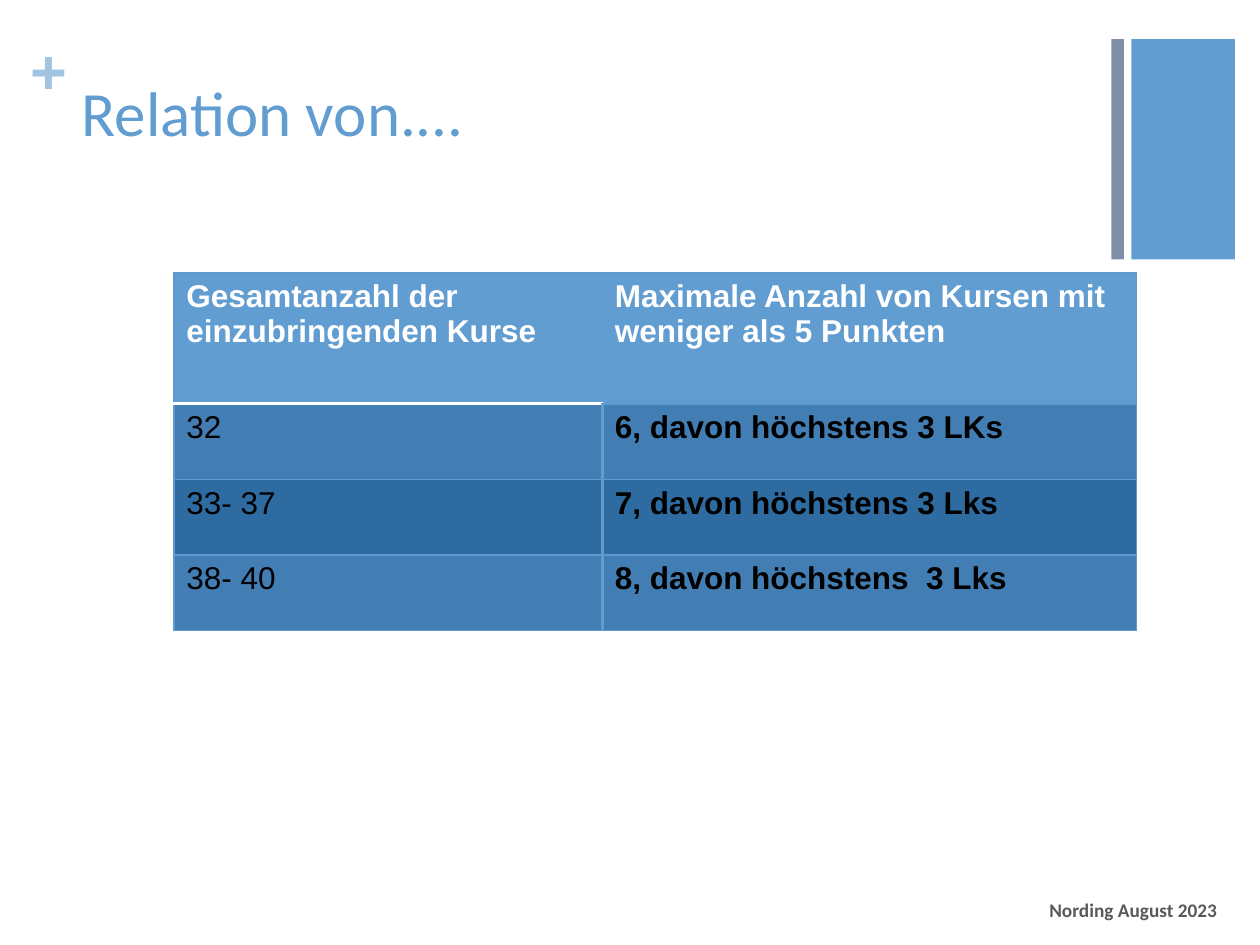
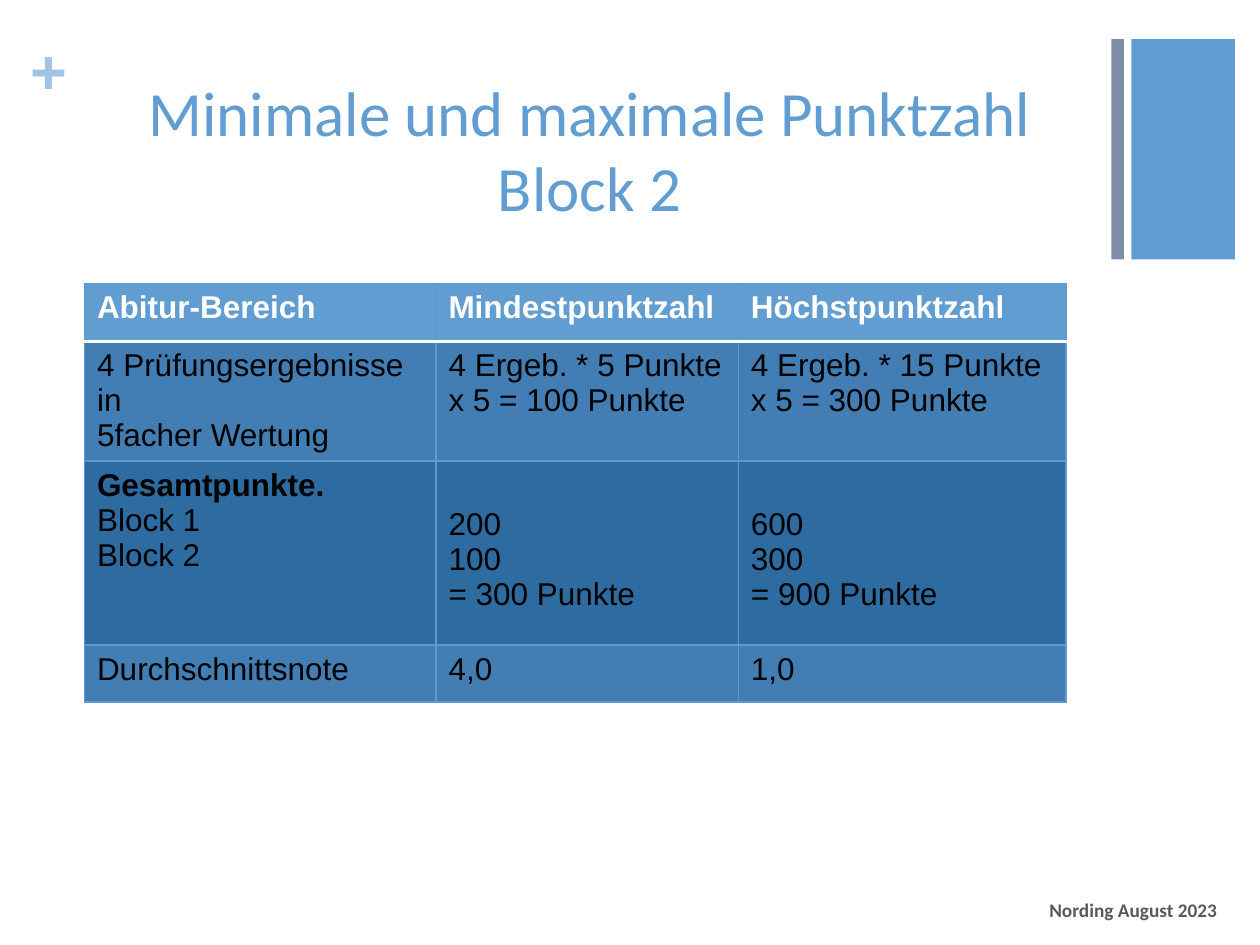
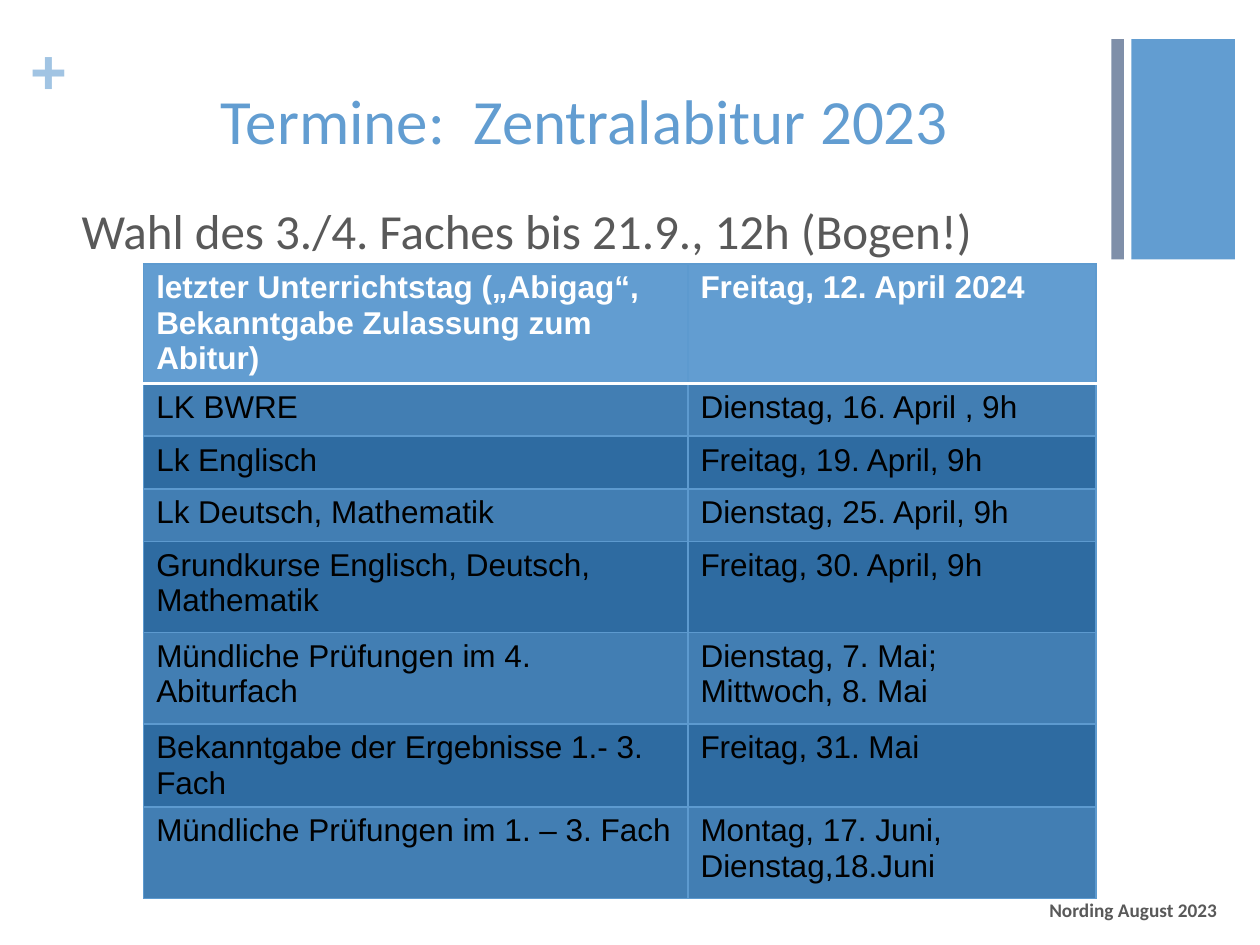
from dataclasses import dataclass

from lxml.etree import SubElement
from pptx import Presentation
from pptx.dml.color import RGBColor
from pptx.enum.shapes import MSO_SHAPE
from pptx.enum.text import MSO_ANCHOR, MSO_AUTO_SIZE, PP_ALIGN
from pptx.oxml.ns import qn
from pptx.util import Inches, Pt


@dataclass(frozen=True)
class Theme:
    blue: str = "629DD1"
    slate: str = "7F8FA9"
    pale: str = "A1C4E3"
    rule: str = "5D9ACF"
    band: str = "427EB3"
    band_dark: str = "2E6BA1"
    white: str = "FFFFFF"
    black: str = "000000"
    grey: str = "595959"
    head_font: str = "Calibri"
    table_font: str = "Arial"
    title_size: int = 36
    body_size: int = 28
    table_size: int = 18
    footer_size: int = 11


COLS, ROWS = 100, 75
FOOTER = "Nording August 2023"


def write(tf, text, *, font, size, color, bold=False, bold_lines=(), align=PP_ALIGN.LEFT):
    tf.word_wrap = True
    for i, line in enumerate(text.split("\n")):
        p = tf.paragraphs[0] if i == 0 else tf.add_paragraph()
        p.text = line
        p.alignment = align
        p.space_before = Pt(0)
        for r in p.runs:
            r.font.name = font
            r.font.size = Pt(size)
            r.font.bold = bold or line in bold_lines
            r.font.color.rgb = RGBColor.from_string(color)


def draw_edge(cell, side, color, width):
    ln = SubElement(cell._tc.get_or_add_tcPr(), qn(f"a:ln{side}"), w=str(Pt(width)))
    fill = SubElement(ln, qn("a:solidFill"))
    SubElement(fill, qn("a:srgbClr"), val=color)


class Deck:
    def __init__(self, theme):
        self.t = theme
        self.prs = Presentation()
        self.prs.slide_width = Inches(10)
        self.prs.slide_height = Inches(7.5)
        self.s = None

    def x(self, cols):
        return round(self.prs.slide_width * cols / COLS)

    def y(self, rows):
        return round(self.prs.slide_height * rows / ROWS)

    def box(self, left, top, width, height):
        return self.x(left), self.y(top), self.x(width), self.y(height)

    def slide(self, title, align=PP_ALIGN.CENTER, left=5.5, top=5.3):
        self.s = self.prs.slides.add_slide(self.prs.slide_layouts[5])
        self.title(title, align, left, top)
        self.text("+", 2.4, 2.5, 2.8, 6.1, inset=0, font=self.t.table_font,
                  size=self.t.title_size, color=self.t.pale, bold=True)
        self.rect(89.8, 3.1, 8.2, 17.5, self.t.blue)
        self.rect(88.2, 3.1, 1, 17.5, self.t.slate)
        self.text(FOOTER, 74.3, 70.2, 23.3, 4, anchor=MSO_ANCHOR.MIDDLE,
                  font=self.t.head_font, size=self.t.footer_size,
                  color=self.t.grey, bold=True, align=PP_ALIGN.RIGHT)

    def title(self, text, align, left, top):
        sp = self.s.shapes.title
        sp.left, sp.top, sp.width, sp.height = self.box(left, top, 82.6, 12.2)
        tf = sp.text_frame
        tf.auto_size = MSO_AUTO_SIZE.NONE
        tf.vertical_anchor = MSO_ANCHOR.TOP
        write(tf, text, font=self.t.head_font, size=self.t.title_size,
              color=self.t.blue, align=align)

    def text(self, text, left, top, width, height, inset=None,
             anchor=MSO_ANCHOR.TOP, **fmt):
        tf = self.s.shapes.add_textbox(*self.box(left, top, width, height)).text_frame
        tf.vertical_anchor = anchor
        if inset is not None:
            tf.margin_left = tf.margin_right = tf.margin_top = tf.margin_bottom = inset
        write(tf, text, **fmt)

    def rect(self, left, top, width, height, color):
        sp = self.s.shapes.add_shape(MSO_SHAPE.RECTANGLE, *self.box(left, top, width, height))
        sp.shadow.inherit = False
        sp.fill.solid()
        sp.fill.fore_color.rgb = RGBColor.from_string(color)
        sp.line.fill.background()

    def edges(self, row, col, strong_col):
        thin = (self.t.rule, 1)
        edges = dict.fromkeys("LRTB", thin)
        if row < 2 and col != strong_col:
            edges["B" if row == 0 else "T"] = (self.t.white, 2)
        if row > 0 and strong_col is not None:
            if col == strong_col:
                edges["L"] = (self.t.blue, 2)
            elif col == strong_col - 1:
                edges["R"] = (self.t.blue, 2)
        return edges

    def table(self, left, top, widths, heights, data, strong_col=None,
              bold_lines=(), lowered=()):
        frame = self.s.shapes.add_table(
            len(heights), len(widths), *self.box(left, top, sum(widths), sum(heights)))
        table = frame.table
        table.first_row = table.horz_banding = False
        for column, width in zip(table.columns, widths):
            column.width = self.x(width)
        for row, height in zip(table.rows, heights):
            row.height = self.y(height)
        for i, line in enumerate(data):
            header = i == 0
            fill = self.t.blue if header else (self.t.band_dark, self.t.band)[i % 2]
            for j, text in enumerate(line):
                cell = table.cell(i, j)
                for side, (color, width) in self.edges(i, j, strong_col).items():
                    draw_edge(cell, side, color, width)
                cell.fill.solid()
                cell.fill.fore_color.rgb = RGBColor.from_string(fill)
                cell.margin_bottom = 0
                if (i, j) in lowered:
                    cell.margin_top = self.y(3.6)
                write(cell.text_frame, text, font=self.t.table_font,
                      size=self.t.table_size, bold=header or j == strong_col,
                      bold_lines=bold_lines,
                      color=self.t.white if header else self.t.black)


def relation(deck):
    deck.slide("Relation von....", align=PP_ALIGN.LEFT)
    deck.table(13.8, 21.65, [34, 42.4], [10.4, 6, 6, 6], [
        ("Gesamtanzahl der einzubringenden Kurse",
         "Maximale Anzahl von Kursen mit weniger als 5 Punkten"),
        ("32", "6, davon höchstens 3 LKs"),
        ("33- 37", "7, davon höchstens 3 Lks"),
        ("38- 40", "8, davon höchstens  3 Lks"),
    ], strong_col=1)


def block_two(deck):
    deck.slide("Minimale und maximale Punktzahl\vBlock 2")
    deck.table(6.7, 22.5, [27.9, 24, 26], [4.6, 9.3, 14.6, 4.5], [
        ("Abitur-Bereich", "Mindestpunktzahl", "Höchstpunktzahl"),
        ("4 Prüfungsergebnisse in\n5facher Wertung",
         "4 Ergeb. * 5 Punkte x 5 = 100 Punkte",
         "4 Ergeb. * 15 Punkte x 5 = 300 Punkte"),
        ("Gesamtpunkte.\nBlock 1\nBlock 2",
         "200\n100\n= 300 Punkte",
         "600\n300\n= 900 Punkte"),
        ("Durchschnittsnote", "4,0", "1,0"),
    ], bold_lines=("Gesamtpunkte.",), lowered=((2, 1), (2, 2)))


def exam_dates(deck):
    deck.slide("Termine:  Zentralabitur 2023", left=5.1, top=6)
    deck.text("Wahl des 3./4. Faches bis 21.9., 12h (Bogen!)", 5.5, 15.45, 82.6, 5.5,
              font=deck.t.head_font, size=deck.t.body_size, color=deck.t.grey)
    short, tall = 4.17, 7.25
    heights = [9.4, short, short, short, tall, tall, 6.6, tall]
    deck.table(11.4, 20.95, [43.2, 32.4], heights, [
        ("letzter Unterrichtstag („Abigag“, Bekanntgabe Zulassung zum Abitur)",
         "Freitag, 12. April 2024"),
        ("LK BWRE", "Dienstag, 16. April , 9h"),
        ("Lk Englisch", "Freitag, 19. April, 9h"),
        ("Lk Deutsch, Mathematik", "Dienstag, 25. April, 9h"),
        ("Grundkurse Englisch, Deutsch, Mathematik", "Freitag, 30. April, 9h"),
        ("Mündliche Prüfungen im 4. Abiturfach", "Dienstag, 7. Mai;\nMittwoch, 8. Mai"),
        ("Bekanntgabe der Ergebnisse 1.- 3. Fach", "Freitag, 31. Mai"),
        ("Mündliche Prüfungen im 1. – 3. Fach", "Montag, 17. Juni,\nDienstag,18.Juni"),
    ])


def main():
    deck = Deck(Theme())
    for build in (relation, block_two, exam_dates):
        build(deck)
    deck.prs.save("out.pptx")


if __name__ == "__main__":
    main()
